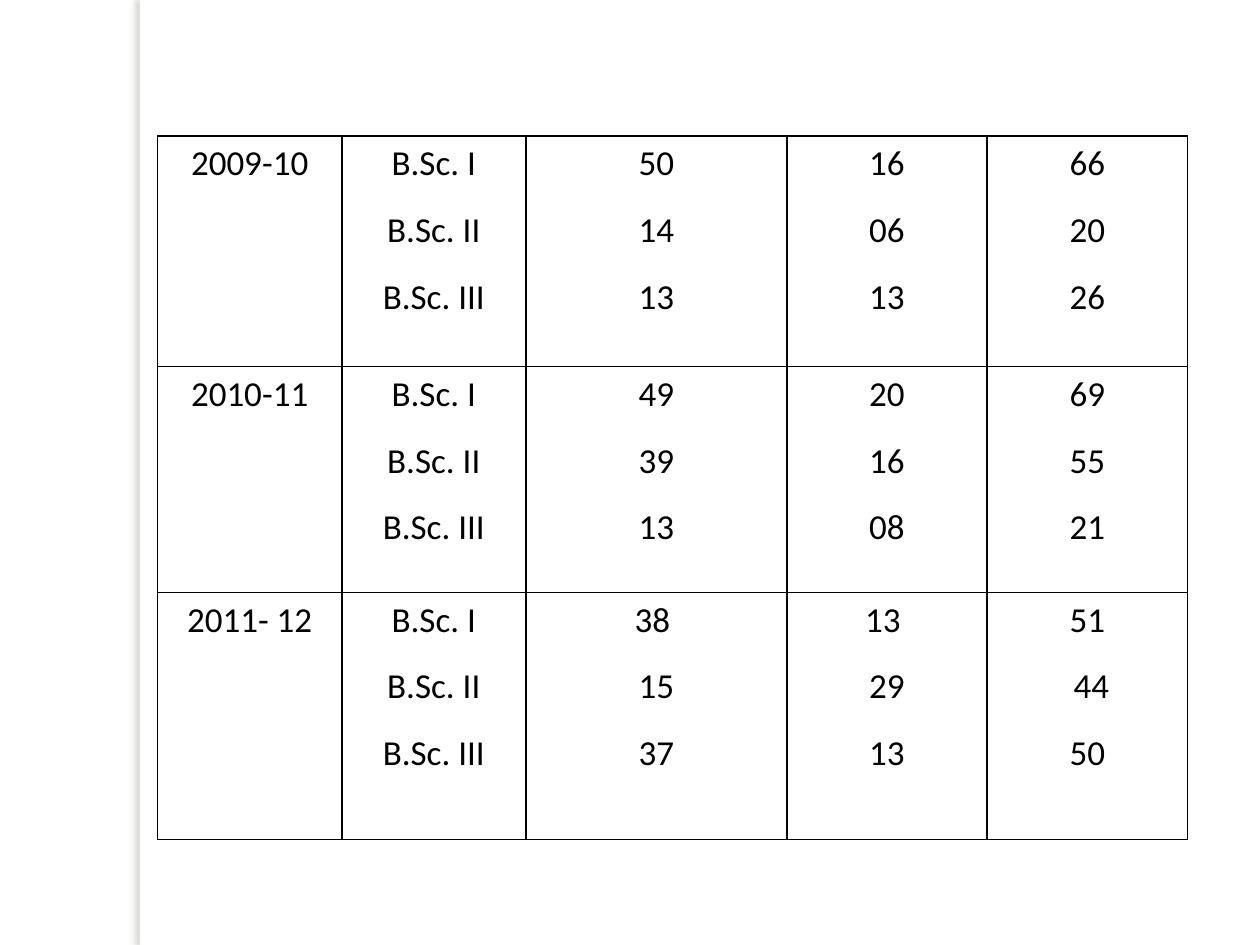
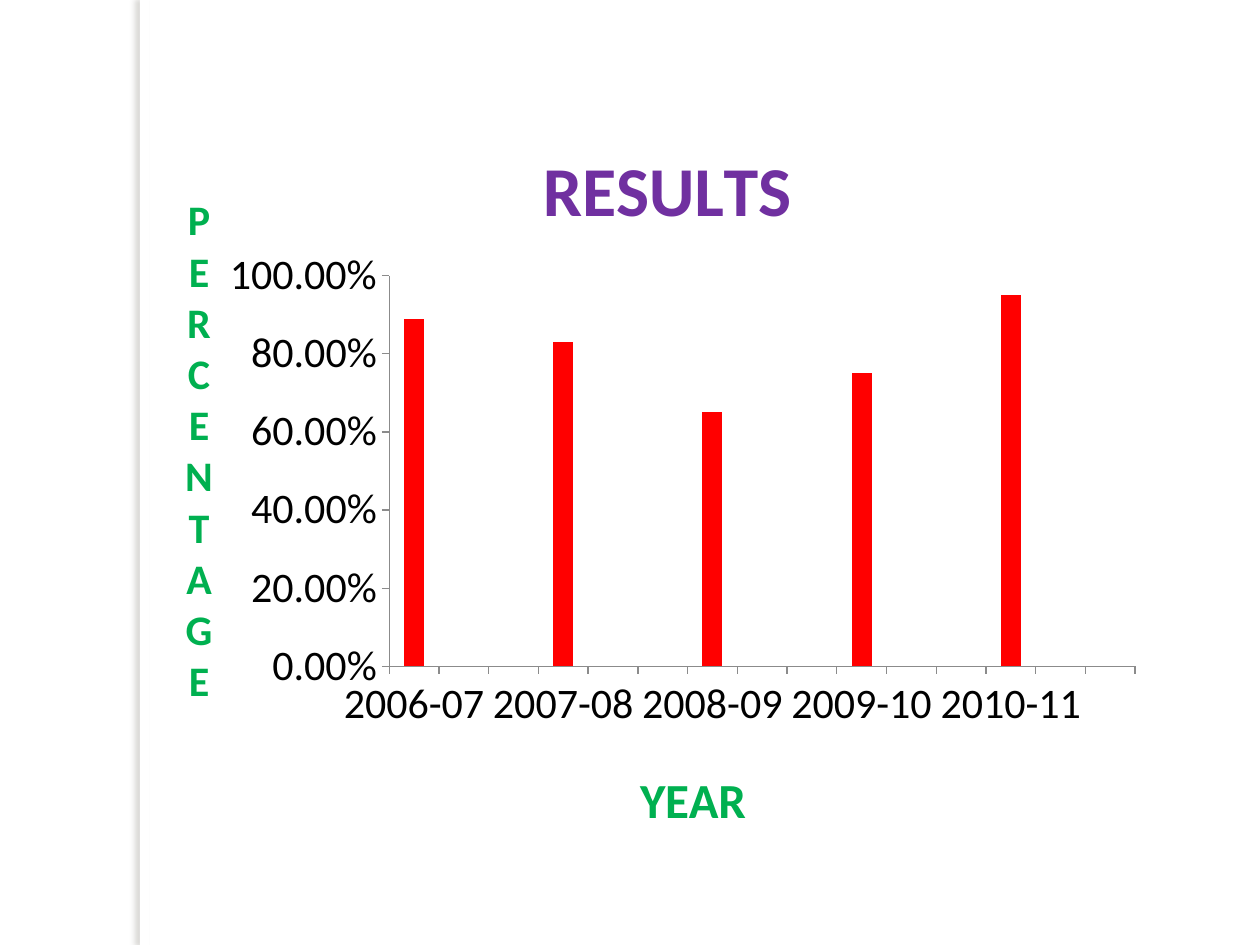
"""Builds a table of student numbers and a chart of yearly results."""
from lxml import etree
from pptx import Presentation
from pptx.chart.data import CategoryChartData as ChartData
from pptx.dml.color import RGBColor
from pptx.enum.chart import XL_CHART_TYPE as Kind, XL_TICK_MARK as Tick
from pptx.enum.shapes import MSO_SHAPE as Form
from pptx.enum.text import PP_ALIGN as Align
from pptx.oxml import parse_xml
from pptx.oxml.ns import nsdecls, qn
from pptx.util import Cm, Pt

FONT = "Calibri"
BLACK, WHITE, GREY = "000000", "FFFFFF", "8B8B8B"
GREEN, PURPLE, RED = "00B050", "7030A0", "FF0000"


def tint(code):
    return RGBColor.from_string(code)


def style(font, size, code=BLACK, bold=False):
    font.name, font.size, font.bold = FONT, Pt(size), bold
    font.color.rgb = tint(code)


deck = Presentation()
deck.slide_width, deck.slide_height = Cm(25.4), Cm(19.05)
pages = [deck.slides.add_slide(deck.slide_layouts[6]) for _ in range(2)]

for page in pages:
    band = page.shapes.add_shape(Form.RECTANGLE, Cm(2.82), 0, Cm(0.2), Cm(19.05))
    band.fill.solid()
    band.fill.fore_color.rgb = tint(WHITE)
    band.line.fill.background()
    band.shadow.inherit = False
    glow = band.element.spPr.find(qn("a:effectLst"))
    glow.append(parse_xml(
        f'<a:outerShdw {nsdecls("a")} blurRad="{Pt(3)}" dist="{Pt(3)}" dir="10800000" '
        'algn="tl" rotWithShape="0"><a:srgbClr val="736F63"><a:alpha val="25000"/>'
        '</a:srgbClr></a:outerShdw>'))

first, second = pages
terms = ["B.Sc. I", "B.Sc. II", "B.Sc. III"]
rows = [
    [["2009-10"], terms, ["50", "14", "13"], ["16", "06", "13"], ["66", "20", "26"]],
    [["2010-11"], terms, ["49", "39", "13"], ["20", "16", "08"], ["69", "55", "21"]],
    [["2011- 12"], terms, ["38 ", "15", "37"], ["13 ", "29", "13"], ["51", " 44", "50"]],
]
wide = [3.71, 3.71, 5.26, 4.04, 4.04]
high = [4.65, 4.55, 4.98]

grid = first.shapes.add_table(len(high), len(wide), Cm(3.18), Cm(2.74),
                              Cm(sum(wide)), Cm(sum(high))).table
grid.first_row = grid.horz_banding = False
for col, size in zip(grid.columns, wide):
    col.width = Cm(size)
for row, size, cells in zip(grid.rows, high, rows):
    row.height = Cm(size)
    for cell, lines in zip(row.cells, cells):
        cell.margin_left = cell.margin_right = Cm(0.13)
        cell.margin_top = cell.margin_bottom = 0
        props = cell._tc.get_or_add_tcPr()
        for side in "LRTB":
            props.append(parse_xml(
                f'<a:ln{side} {nsdecls("a")} w="{Pt(1)}"><a:solidFill>'
                f'<a:srgbClr val="{BLACK}"/></a:solidFill></a:ln{side}>'))
        cell.fill.background()
        for i, line in enumerate(lines):
            para = cell.text_frame.add_paragraph() if i else cell.text_frame.paragraphs[0]
            para.alignment = Align.CENTER
            para.line_spacing, para.space_after = 1.15, Pt(10)
            run = para.add_run()
            run.text = line
            style(run.font, 20)

marks = {"2006-07": 0.89, "2007-08": 0.83, "2008-09": 0.65, "2009-10": 0.75, "2010-11": 0.95}
data = ChartData(number_format="0.00%")
data.categories = [name for year in marks for name in (year, "", "")]
data.add_series("Series 1", [val for mark in marks.values() for val in (mark, None, None)])
chart = second.shapes.add_chart(Kind.COLUMN_CLUSTERED, Cm(2.97), Cm(1.7),
                                Cm(20.32), Cm(15.44), data).chart
style(chart.font, 10)
chart.has_legend = False
chart.has_title = True
plot = chart.plots[0]
plot.gap_width, plot.vary_by_categories = 150, False
bars = plot.series[0].format.fill
bars.solid()
bars.fore_color.rgb = tint(RED)

years, share = chart.category_axis, chart.value_axis
for axis in (years, share):
    axis.has_title = True
    axis.has_major_gridlines = False
    axis.major_tick_mark = Tick.OUTSIDE
    axis.format.line.color.rgb = tint(GREY)
    style(axis.tick_labels.font, 24)
share.minimum_scale, share.maximum_scale, share.major_unit = 0, 1, 0.2
share.tick_labels.number_format = "0.00%"
share.tick_labels.number_format_is_linked = False

spots = []
for title, text, size, code, x, y in [
    (chart.chart_title, "RESULTS", 40, PURPLE, 0.38, 0.06),
    (years.axis_title, "YEAR", 28, GREEN, 0.48, 0.88),
    (share.axis_title, "PERCENTAGE", 24, GREEN, 0.03, 0.13),
]:
    run = title.text_frame.paragraphs[0].add_run()
    run.text = text
    style(run.font, size, code, True)
    spots.append((title.element, 1, {"xMode": "edge", "yMode": "edge", "x": x, "y": y}))
body = share.axis_title.element.find(".//" + qn("a:bodyPr"))
body.set("rot", "0")
body.set("vert", "wordArtVert")

area = chart.element.find(".//" + qn("c:plotArea"))
spots.append((area, 0, {"layoutTarget": "inner", "xMode": "edge", "yMode": "edge",
                        "x": 0.24, "y": 0.25, "w": 0.74, "h": 0.51}))
for part, place, rules in spots:
    for old in part.findall(qn("c:layout")):
        part.remove(old)
    box = parse_xml(f'<c:layout {nsdecls("c")}><c:manualLayout/></c:layout>')
    for key, val in rules.items():
        etree.SubElement(box[0], qn("c:" + key)).set("val", str(val))
    part.insert(place, box)

deck.save("out.pptx")
